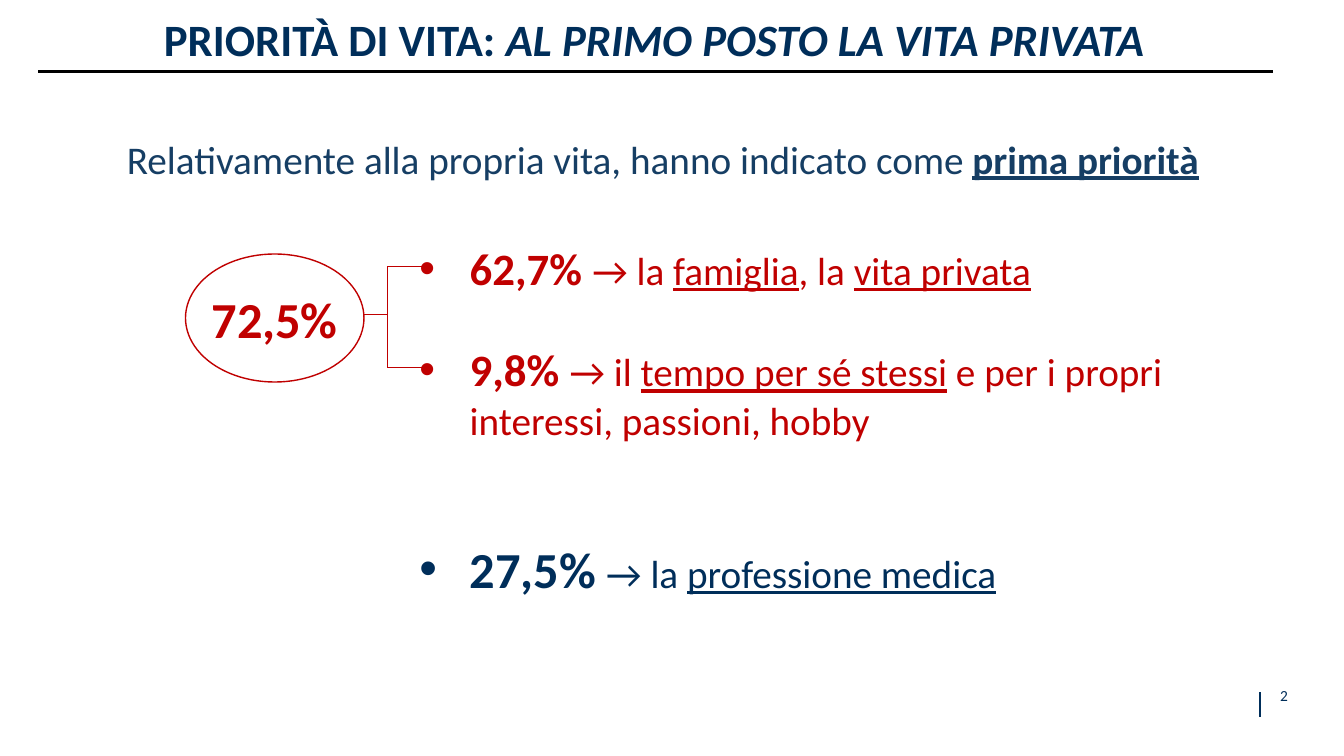
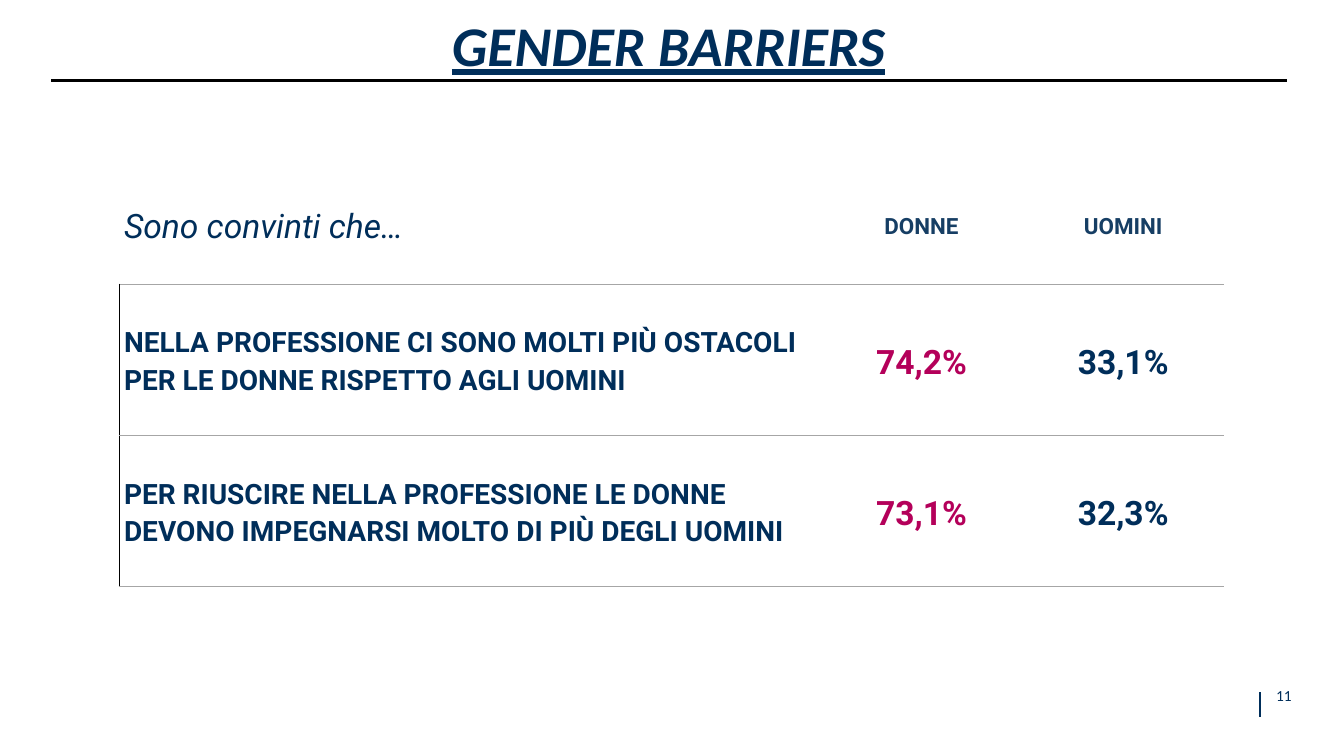
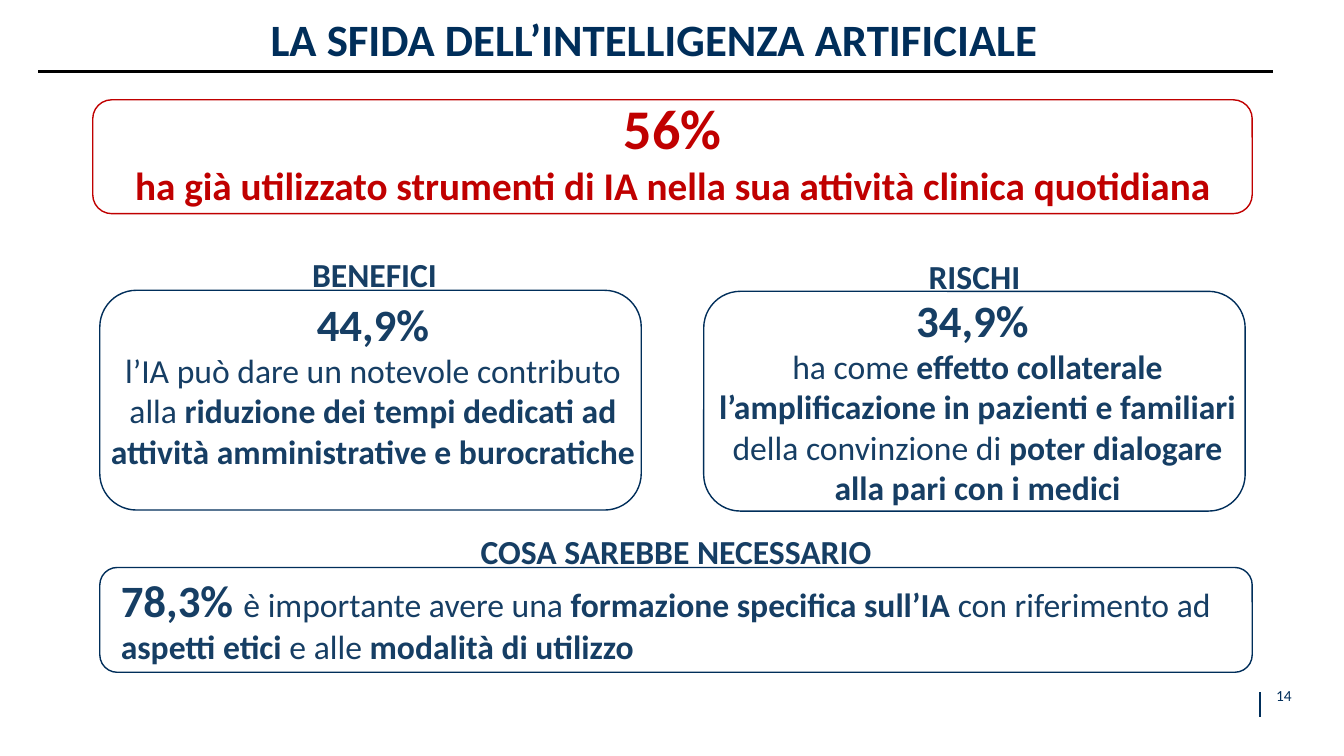
from dataclasses import dataclass

from lxml import etree
from pptx import Presentation
from pptx import util as u
from pptx.dml.color import RGBColor
from pptx.enum import shapes, text
from pptx.oxml.ns import qn

Inches, Pt = u.Inches, u.Pt
SHAPE, LINE = shapes.MSO_SHAPE, shapes.MSO_CONNECTOR
ALIGN, ANCHOR = text.PP_ALIGN, text.MSO_ANCHOR


@dataclass(frozen=True)
class Theme:
    navy: str = "002E5A"
    slate: str = "163E64"
    red: str = "C00000"
    magenta: str = "B4005A"
    grey: str = "A6A6A6"
    white: str = "FFFFFF"
    black: str = "000000"
    body_font: str = "Calibri"
    table_font: str = "Roboto"
    hero: int = 40
    big: int = 36
    title: int = 32
    lead: int = 28
    copy: int = 24
    row: int = 20
    header: int = 16
    footer: int = 11


T = Theme()
BOLD = {"bold": True}
LINK = {"underline": True}
FIGURE = {"bold": True, "size": T.title}

# Content: a paragraph is a list of runs, a run is a string or (string, format)
PRIORITIES_TITLE = ["PRIORITÀ DI VITA: ", ("AL PRIMO POSTO LA VITA PRIVATA", {"italic": True})]
PRIORITIES_INTRO = ["Relativamente alla propria vita, hanno indicato come ",
                    ("prima priorità", {"bold": True, "underline": True})]
PRIVATE_LIFE_TOTAL = "72,5%"
PRIORITIES = [
    [("62,7% ", FIGURE), "→ la ", ("famiglia", LINK), ", la ", ("vita privata", LINK)],
    [("9,8% ", FIGURE), "→ il ", ("tempo per sé stessi", LINK),
     " e per i propri interessi, passioni, hobby"],
    [("27,5%", {"bold": True, "size": T.big, "color": T.navy}),
     (" ", {"bold": True, "size": T.title, "color": T.navy}),
     ("→ la ", {"color": T.navy}),
     ("professione medica", {"underline": True, "color": T.navy})],
]
PRIORITY_GAPS = [0, 34, 68]

BARRIERS_TITLE = [("GENDER BARRIERS", {"italic": True, "underline": True})]
BARRIERS_HEADER = ["Sono convinti che…", "DONNE", "UOMINI"]
BARRIERS = [
    (["NELLA PROFESSIONE CI SONO MOLTI PIÙ OSTACOLI PER LE DONNE RISPETTO AGLI UOMINI"],
     "74,2%", "33,1%"),
    (["PER RIUSCIRE NELLA PROFESSIONE LE DONNE ", "\n",
      "DEVONO IMPEGNARSI MOLTO DI PIÙ DEGLI UOMINI"],
     "73,1%", "32,3%"),
]

AI_TITLE = ["LA SFIDA DELL’INTELLIGENZA ARTIFICIALE"]
AI_USE = [[("56%", {"size": T.hero})],
          ["ha già utilizzato strumenti di IA nella sua attività clinica quotidiana"]]
BENEFITS = [
    [("44,9%", FIGURE)],
    ["l’IA può dare un notevole contributo alla ",
     ("riduzione dei tempi dedicati ad attività amministrative e burocratiche", BOLD)],
]
RISKS = [
    [("34,9% ", FIGURE)],
    ["ha come", (" effetto collaterale l’amplificazione in pazienti e familiari ", BOLD),
     "della convinzione di", (" poter dialogare alla pari con i medici", BOLD)],
]
NEEDS = [
    [("78,3% ", FIGURE), "è importante avere una ", ("formazione specifica sull’IA ", BOLD),
     "con riferimento ad ", ("aspetti etici", BOLD), " e alle ",
     ("modalità di utilizzo", BOLD)],
]
# Frame place, heading and its place, text and its place
AI_CARDS = [
    ((0.99, 2.88, 5.37, 2.18), "BENEFICI", (1.03, 2.47), BENEFITS,
     (0.98, 2.89, 5.44, 1.85), ALIGN.CENTER),
    ((6.98, 2.89, 5.37, 2.18), "RISCHI", (6.98, 2.49), RISKS,
     (7.02, 2.85, 5.35, 2.26), ALIGN.CENTER),
    ((0.99, 5.63, 11.43, 1.04), "COSA SAREBBE NECESSARIO", (4.02, 5.22), NEEDS,
     (1.1, 5.63, 11.14, 1.04), ALIGN.LEFT),
]


# Text helpers
def add_bullet(paragraph, indent=0.5):
    props = paragraph._p.get_or_add_pPr()
    props.set("marL", str(Inches(indent)))
    props.set("indent", str(-Inches(indent)))
    etree.SubElement(props, qn("a:buFont")).set("typeface", "Arial")
    etree.SubElement(props, qn("a:buChar")).set("char", "•")


def write(frame, paragraphs, align=ALIGN.LEFT, line=None, gaps=None, after=None,
          bullets=False, **base):
    """Fill a text frame; base is the run format that single runs may override."""
    for i, runs in enumerate(paragraphs):
        paragraph = frame.paragraphs[0] if i == 0 else frame.add_paragraph()
        if bullets:
            add_bullet(paragraph)
        paragraph.alignment = align
        if line:
            paragraph.line_spacing = line
        if gaps and gaps[i]:
            paragraph.space_before = Pt(gaps[i])
        if after:
            paragraph.space_after = Pt(after)
        for run in runs:
            if run == "\n":
                paragraph.add_line_break()
                continue
            words, changes = (run, {}) if isinstance(run, str) else run
            look = {"font": T.body_font, "color": T.navy, **base, **changes}
            part = paragraph.add_run()
            part.text = words
            part.font.name = look["font"]
            part.font.size = Pt(look["size"])
            part.font.color.rgb = RGBColor.from_string(look["color"])
            part.font.bold = look.get("bold", False)
            part.font.italic = look.get("italic", False)
            part.font.underline = look.get("underline", False)


def add_text(slide, place, paragraphs, wrap=True, anchor=ANCHOR.TOP, inset=None, **look):
    frame = slide.shapes.add_textbox(*map(Inches, place)).text_frame
    frame.word_wrap = wrap
    frame.vertical_anchor = anchor
    if inset is not None:
        frame.margin_left = frame.margin_right = Inches(inset)
        frame.margin_top = frame.margin_bottom = Inches(inset)
    write(frame, paragraphs, **look)


# Drawing helpers
def add_line(slide, start, end, color, width):
    line = slide.shapes.add_connector(LINE.STRAIGHT, *map(Inches, (*start, *end)))
    line.line.color.rgb = RGBColor.from_string(color)
    line.line.width = Pt(width)
    etree.SubElement(line._element.spPr, qn("a:effectLst"))


def add_outline(slide, kind, place, color):
    outline = slide.shapes.add_shape(kind, *map(Inches, place))
    outline.shadow.inherit = False
    outline.fill.background()
    outline.line.color.rgb = RGBColor.from_string(color)
    outline.line.width = Pt(1)
    return outline


def set_borders(cell, **sides):
    """Sides are L, R, T, B, each with (colour, width)."""
    props = cell._tc.get_or_add_tcPr()
    for i, side in enumerate(s for s in "LRTB" if s in sides):
        color, width = sides[side]
        border = etree.Element(qn(f"a:ln{side}"), w=str(Pt(width)))
        fill = etree.SubElement(border, qn("a:solidFill"))
        etree.SubElement(fill, qn("a:srgbClr")).set("val", color)
        props.insert(i, border)


# Shared slide parts
def new_slide(deck, number, title, left=0.34, size=T.title, height=0.59, rule=(0.38, 0.71)):
    slide = deck.slides.add_slide(deck.slide_layouts[6])
    add_line(slide, (12.5, 7.11), (12.5, 6.87), T.navy, 1.5)
    add_text(slide, (12.56, 6.75, 0.35, 0.3), [[str(number)]], wrap=False,
             anchor=ANCHOR.BOTTOM, inset=0.06, align=ALIGN.CENTER, size=T.footer)
    add_text(slide, (left, 0.13, 12.3, height), [title], align=ALIGN.CENTER,
             line=0.9, size=size, bold=True)
    add_line(slide, rule, (rule[0] + 12.25, rule[1]), T.black, 2)
    return slide


def build_priorities(deck):
    slide = new_slide(deck, 2, PRIORITIES_TITLE)
    add_text(slide, (1.16, 1.29, 11.01, 0.57), [PRIORITIES_INTRO], align=ALIGN.JUSTIFY,
             size=T.lead, color=T.slate)
    add_text(slide, (4.06, 2.34, 8.95, 3.67), PRIORITIES, bullets=True,
             gaps=PRIORITY_GAPS, size=T.lead, color=T.red)

    # Total and the bracket that joins it to its two parts
    total = add_outline(slide, SHAPE.OVAL, (1.84, 2.52, 1.77, 1.27), T.red)
    total.text_frame.word_wrap = False
    total.text_frame.vertical_anchor = ANCHOR.MIDDLE
    write(total.text_frame, [[PRIVATE_LIFE_TOTAL]], align=ALIGN.CENTER,
          size=T.big, color=T.red, bold=True)
    spine, top, bottom = 3.84, 2.64, 3.65
    for y in (top, bottom):
        add_line(slide, (spine, y), (4.19, y), T.red, 0.75)
    add_line(slide, (spine, top), (spine, bottom), T.red, 0.25)
    add_line(slide, (3.61, 3.12), (spine, 3.12), T.red, 0.25)


def build_barriers(deck):
    slide = new_slide(deck, 11, BARRIERS_TITLE, left=0.48, size=T.hero, height=0.71,
                      rule=(0.51, 0.8))
    widths, heights = (6.96, 2, 2), (1.14, 1.5, 1.5)
    place = (1.18, 1.68, sum(widths), sum(heights))
    table = slide.shapes.add_table(len(heights), len(widths), *map(Inches, place)).table
    table.first_row = table.horz_banding = False
    for column, width in zip(table.columns, widths):
        column.width = Inches(width)
    for row, height in zip(table.rows, heights):
        row.height = Inches(height)

    statement = {"size": T.row, "bold": True}
    header_looks = [{"size": T.copy, "italic": True}] + [
        {"size": T.header, "bold": True, "color": T.slate}] * 2
    body_looks = [statement] + [
        {"size": T.copy, "bold": True, "color": color} for color in (T.magenta, T.navy)]
    grey, white, black = (T.grey, 1), (T.white, 0.75), (T.black, 0.75)

    for r, values in enumerate([BARRIERS_HEADER, *BARRIERS]):
        for c, value in enumerate(values):
            cell = table.cell(r, c)
            cell.fill.background()
            cell.vertical_anchor = ANCHOR.MIDDLE
            cell.margin_left = cell.margin_right = Inches(0.05)
            cell.margin_top = cell.margin_bottom = Inches(0 if r else 0.05)
            look = (body_looks if r else header_looks)[c]
            spacing = {"line": 1.15, "after": 6} if r else {}
            write(cell.text_frame, [[value] if isinstance(value, str) else value],
                  align=ALIGN.CENTER if c else ALIGN.LEFT, font=T.table_font,
                  **spacing, **look)
            set_borders(cell, L=black if r and c == 0 else white, R=white,
                        T=grey if r else white, B=grey)


def build_ai(deck):
    slide = new_slide(deck, 14, AI_TITLE)
    add_outline(slide, SHAPE.ROUNDED_RECTANGLE, (0.92, 0.99, 11.5, 1.13), T.red)
    add_text(slide, (0.92, 0.88, 11.5, 1.25), AI_USE, align=ALIGN.CENTER,
             size=T.lead, color=T.red, bold=True)
    for frame, heading, corner, paragraphs, place, align in AI_CARDS:
        add_outline(slide, SHAPE.ROUNDED_RECTANGLE, frame, T.navy)
        add_text(slide, (*corner, 5.37, 0.5), [[heading]], align=ALIGN.CENTER,
                 size=T.copy, color=T.slate, bold=True)
        add_text(slide, place, paragraphs, align=align, size=T.copy, color=T.slate)


def main():
    deck = Presentation()
    deck.slide_width, deck.slide_height = Inches(13.33), Inches(7.5)
    for build in (build_priorities, build_barriers, build_ai):
        build(deck)
    deck.save("out.pptx")


if __name__ == "__main__":
    main()
